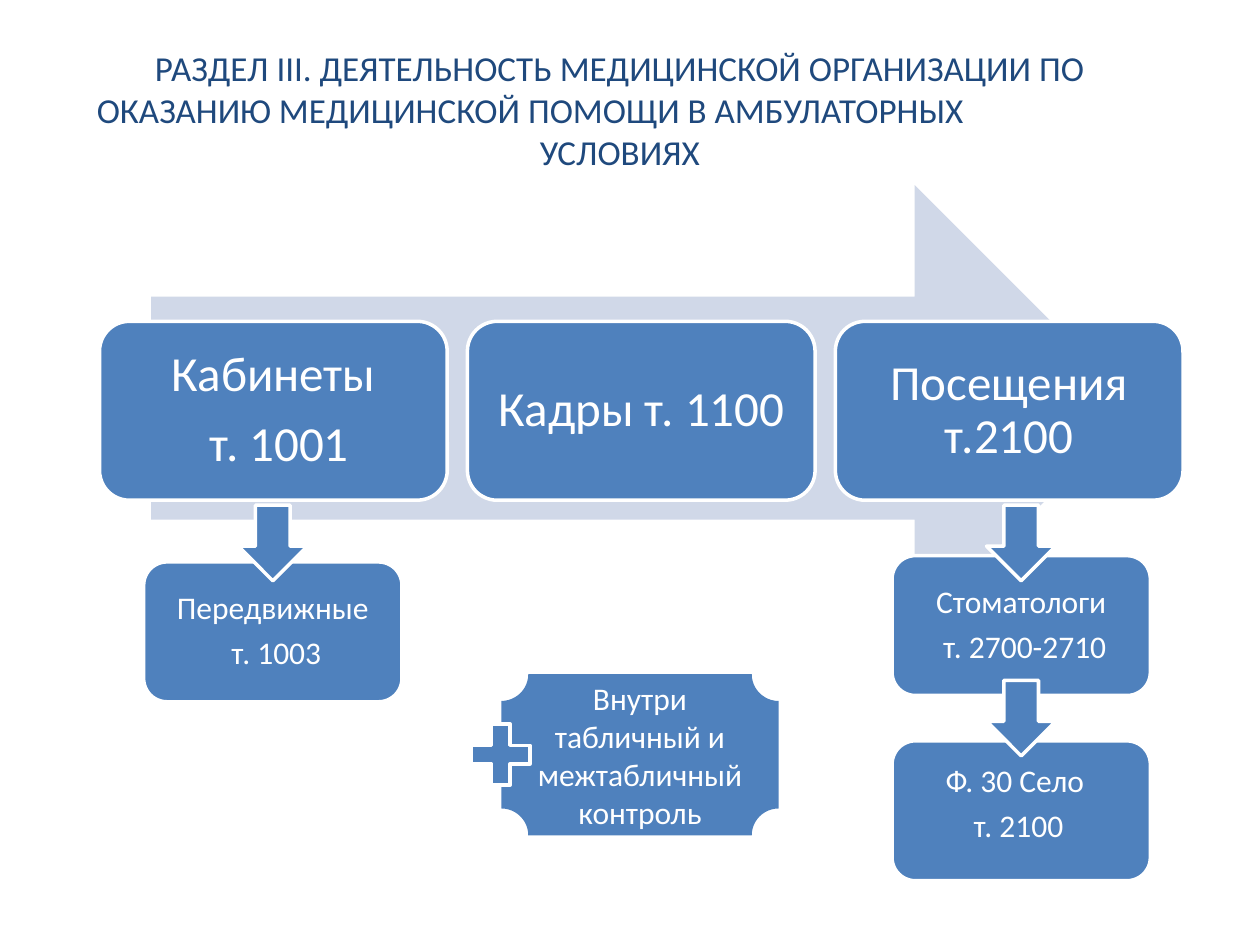
"""Build the slide on the outpatient section of the report form."""
from dataclasses import dataclass

from pptx import Presentation
from pptx.dml.color import RGBColor
from pptx.enum.shapes import MSO_SHAPE
from pptx.enum.text import MSO_ANCHOR, PP_ALIGN
from pptx.util import Inches, Pt

CENTER, LEFT = PP_ALIGN.CENTER, PP_ALIGN.LEFT
MIDDLE = MSO_ANCHOR.MIDDLE
ROUNDED = MSO_SHAPE.ROUNDED_RECTANGLE
RIGHT_ARROW, DOWN_ARROW = MSO_SHAPE.RIGHT_ARROW, MSO_SHAPE.DOWN_ARROW
PLAQUE, PLUS = MSO_SHAPE.PLAQUE, MSO_SHAPE.MATH_PLUS


@dataclass(frozen=True)
class Theme:
    """Colours and type of the slide."""
    font: str = "Calibri"
    navy: RGBColor = RGBColor(0x1F, 0x49, 0x7D)
    blue: RGBColor = RGBColor(0x4F, 0x81, 0xBD)
    pale: RGBColor = RGBColor(0xD0, 0xD8, 0xE8)
    white: RGBColor = RGBColor(0xFF, 0xFF, 0xFF)
    title: int = 20
    large: int = 28
    small: int = 18
    outline: int = 2


THEME = Theme()


def write(box, lines, size, color, spacing=None, gap=0):
    """Write one centred paragraph per line and return the paragraphs."""
    frame = box.text_frame
    frame.word_wrap = True
    frame.vertical_anchor = MIDDLE
    frame.text = "\n".join(lines)
    for para in frame.paragraphs:
        para.alignment = CENTER
        para.line_spacing = spacing
        para.space_after = Pt(gap)
        para.font.name = THEME.font
        para.font.size = Pt(size)
        para.font.color.rgb = color
    return frame.paragraphs


def add_shape(page, kind, left, top, width, height, fill=THEME.blue, outlined=True):
    """Add a flat preset shape, outlined in white if asked."""
    shape = page.shapes.add_shape(
        kind, Inches(left), Inches(top), Inches(width), Inches(height))
    shape.shadow.inherit = False
    shape.fill.solid()
    shape.fill.fore_color.rgb = fill
    if outlined:
        shape.line.color.rgb = THEME.white
        shape.line.width = Pt(THEME.outline)
    else:
        shape.line.fill.background()
    return shape


def add_card(page, place, lines, size, extra=0):
    """Add a rounded card; extra widens its right and bottom margins."""
    card = add_shape(page, ROUNDED, *place)
    write(card, lines, size, THEME.white, spacing=0.9, gap=size * 0.35)
    frame = card.text_frame
    frame.margin_left = frame.margin_top = Inches(0.12)
    frame.margin_right = frame.margin_bottom = Inches(0.12 + extra)


def add_title(page):
    """Add the heading with its second line set to the left."""
    box = page.shapes.add_textbox(Inches(0.67), Inches(0.36), Inches(8.5), Inches(1.02))
    lines = ["РАЗДЕЛ III. ДЕЯТЕЛЬНОСТЬ МЕДИЦИНСКОЙ ОРГАНИЗАЦИИ ПО",
             "ОКАЗАНИЮ МЕДИЦИНСКОЙ ПОМОЩИ В АМБУЛАТОРНЫХ",
             "УСЛОВИЯХ"]
    write(box, lines, THEME.title, THEME.navy)[1].alignment = LEFT


def add_control(page):
    """Add the plaque on table checks with its plus sign."""
    plaque = add_shape(page, PLAQUE, 3.98, 5.35, 2.2, 1.28, outlined=False)
    write(plaque, ["Внутри табличный и межтабличный", "контроль"], THEME.small, THEME.white)
    add_shape(page, PLUS, 3.66, 5.66, 0.63, 0.66)


def main():
    """Build and save the deck."""
    deck = Presentation()
    deck.slide_width, deck.slide_height = Inches(10), Inches(7.5)
    page = deck.slides.add_slide(deck.slide_layouts[6])

    add_title(page)
    add_shape(page, RIGHT_ARROW, 1.2, 1.47, 7.83, 3.54, THEME.pale, outlined=False)

    stages = [["Кабинеты", " т. 1001"], ["Кадры т. 1100"], ["Посещения т.2100"]]
    for index, lines in enumerate(stages):
        add_card(page, (0.79 + 2.92 * index, 2.55, 2.76, 1.42), lines, THEME.large)

    details = [(1.14, 4.46, ["Передвижные", " т. 1003"], 0),
               (7.08, 5.88, ["Ф. 30 Село", " т. 2100"], 0.1),
               (7.08, 4.41, ["Стоматологи", " т. 2700-2710"], 0)]
    for left, top, lines, extra in details:
        add_card(page, (left, top, 2.05, 1.11), lines, THEME.small, extra)

    for left, top in [(1.89, 4.01), (7.83, 4.01), (7.83, 5.4)]:
        add_shape(page, DOWN_ARROW, left, top, 0.55, 0.6)

    add_control(page)
    deck.save("out.pptx")


if __name__ == "__main__":
    main()
